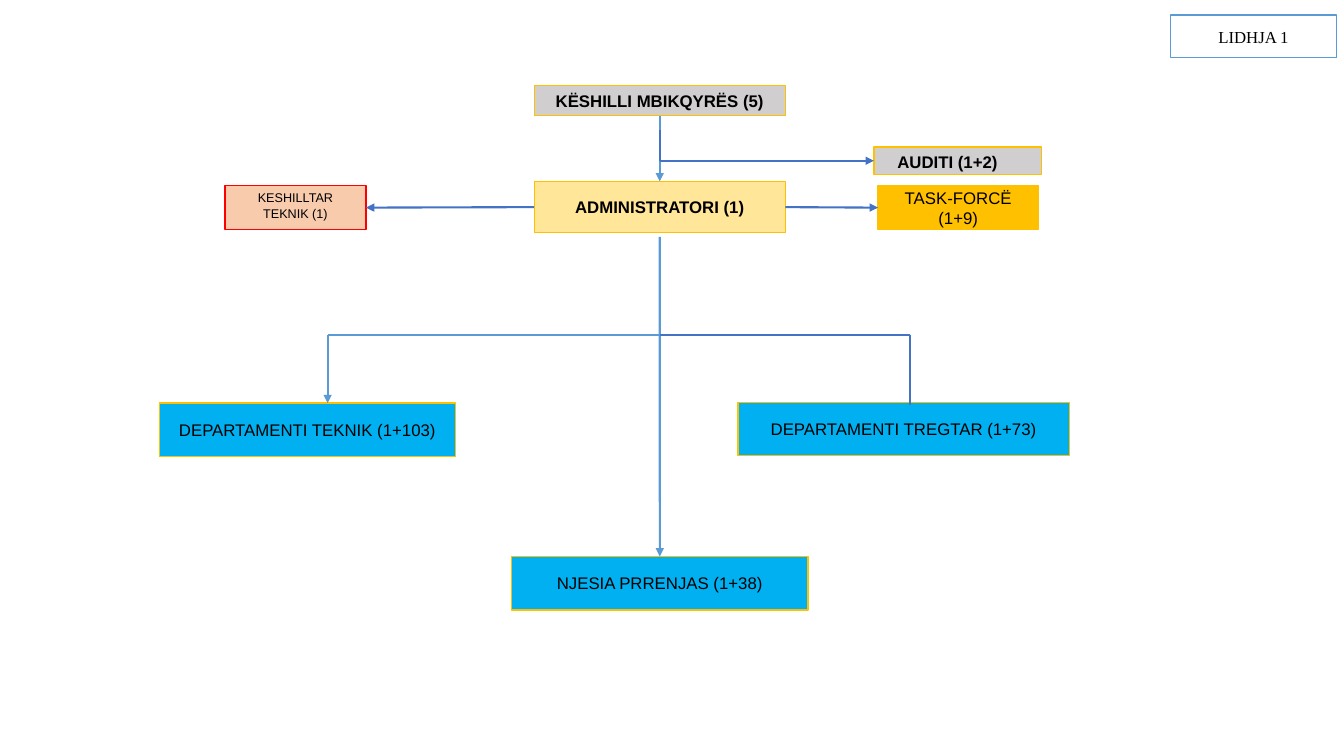
from dataclasses import dataclass
from itertools import pairwise

from lxml.etree import SubElement
from pptx import Presentation
from pptx.dml.color import RGBColor as Rgb
from pptx.enum.shapes import MSO_CONNECTOR as Conn, MSO_SHAPE as Shape
from pptx.enum.text import MSO_ANCHOR as Anchor, PP_ALIGN as Align
from pptx.oxml.ns import qn
from pptx.util import Inches, Pt

WIDTH, HEIGHT = Inches(13.33), Inches(7.5)
COL, ROW = WIDTH / 100, HEIGHT / 100
TOP, LEFT, BOTTOM, RIGHT = range(4)


@dataclass(frozen=True)
class Theme:
    sans: str = "Arial"
    serif: str = "Times New Roman"
    body: float = 12
    small: float = 9
    edge: float = 1
    wire: float = 1.5
    ink: str = "000000"
    white: str = "FFFFFF"
    grey: str = "D0CECE"
    cream: str = "FFE699"
    gold: str = "FFC000"
    peach: str = "F8CBAD"
    red: str = "FF0000"
    cyan: str = "00B0F0"
    sky: str = "5B9BD5"
    blue: str = "4472C4"


THEME = Theme()


def color(code):
    return Rgb.from_string(code)


def write(frame, text, size=THEME.body, font=THEME.sans, bold=False,
          anchor=Anchor.MIDDLE, right=0.1):
    """Put centred text in a frame; right is its right inset in inches."""
    frame.word_wrap = True
    frame.vertical_anchor = anchor
    frame.margin_right = Inches(right)
    para = frame.paragraphs[0]
    para.alignment = Align.CENTER
    run = para.add_run()
    run.text = text
    run.font.name, run.font.size, run.font.bold = font, Pt(size), bold
    run.font.color.rgb = color(THEME.ink)


def box(slide, area, text, fill, line=THEME.gold, **style):
    """Add a labelled box; area is left, top, width, height in grid cells."""
    left, top, wide, high = area
    shape = slide.shapes.add_shape(
        Shape.RECTANGLE, round(left * COL), round(top * ROW),
        round(wide * COL), round(high * ROW))
    shape.shadow.inherit = False
    shape.fill.solid()
    shape.fill.fore_color.rgb = color(fill)
    shape.line.color.rgb = color(line)
    shape.line.width = Pt(THEME.edge)
    write(shape.text_frame, text, **style)
    return shape


def leg(slide, start, end, tint, arrow):
    """Add a line; each end is a grid point or a (shape, side) pair."""
    wire = slide.shapes.add_connector(Conn.STRAIGHT, 0, 0, 0, 0)
    if isinstance(start[0], (int, float)):
        wire.begin_x, wire.begin_y = round(start[0] * COL), round(start[1] * ROW)
    else:
        wire.begin_connect(*start)
    if isinstance(end[0], (int, float)):
        wire.end_x, wire.end_y = round(end[0] * COL), round(end[1] * ROW)
    else:
        wire.end_connect(*end)
    wire.line.color.rgb = color(tint)
    wire.line.width = Pt(THEME.wire)
    props = wire.line._get_or_add_ln()
    if arrow:
        SubElement(props, qn("a:tailEnd"), type="triangle")
    SubElement(props.getparent(), qn("a:effectLst"))


def route(slide, *stops, tint=THEME.blue, arrow=True):
    """Join the stops by straight legs, with the arrowhead on the last."""
    for start, end in pairwise(stops):
        leg(slide, start, end, tint, arrow and end is stops[-1])


def main():
    deck = Presentation()
    deck.slide_width, deck.slide_height = WIDTH, HEIGHT
    slide = deck.slides.add_slide(deck.slide_layouts[6])

    box(slide, (87.08, 2, 12.38, 5.6), "LIDHJA 1", THEME.white,
        THEME.sky, font=THEME.serif)
    board = box(slide, (39.75, 11.33, 18.68, 4), "KËSHILLI MBIKQYRËS (5)",
                THEME.grey, bold=True)
    audit = box(slide, (65.03, 19.47, 12.45, 3.6), "AUDITI (1+2)", THEME.grey,
                bold=True, anchor=Anchor.TOP, right=0.3)
    admin = box(slide, (39.75, 24, 18.68, 6.8), "ADMINISTRATORI (1)",
                THEME.cream, bold=True)
    force = box(slide, (65.33, 24.53, 11.93, 5.87), "TASK-FORCË (1+9)",
                THEME.gold)
    expert = box(slide, (16.73, 24.53, 10.5, 5.87), "KESHILLTAR TEKNIK (1)",
                 THEME.peach, THEME.red, size=THEME.small, anchor=Anchor.TOP)
    box(slide, (11.85, 53.33, 22.05, 7.07), "DEPARTAMENTI TEKNIK (1+103)",
        THEME.cyan)
    box(slide, (54.9, 53.2, 24.68, 7.07), "DEPARTAMENTI TREGTAR (1+73)",
        THEME.cyan)
    unit = box(slide, (38.07, 73.6, 22.05, 7.07), "NJESIA PRRENJAS (1+38)",
               THEME.cyan)

    spine, fork = 49.09, 44.27
    route(slide, (board, BOTTOM), (admin, TOP), tint=THEME.sky)
    route(slide, (spine, 17.2), (spine, 21.27), (audit, LEFT))
    route(slide, (admin, LEFT), (expert, RIGHT))
    route(slide, (admin, RIGHT), (force, LEFT))
    route(slide, (spine, 31.33), (unit, TOP), tint=THEME.sky)
    route(slide, (spine, fork), (24.38, fork), (24.38, 53.33), tint=THEME.sky)
    route(slide, (spine, fork), (67.73, fork), (67.73, 53.6), arrow=False)
    deck.save("out.pptx")


if __name__ == "__main__":
    main()
